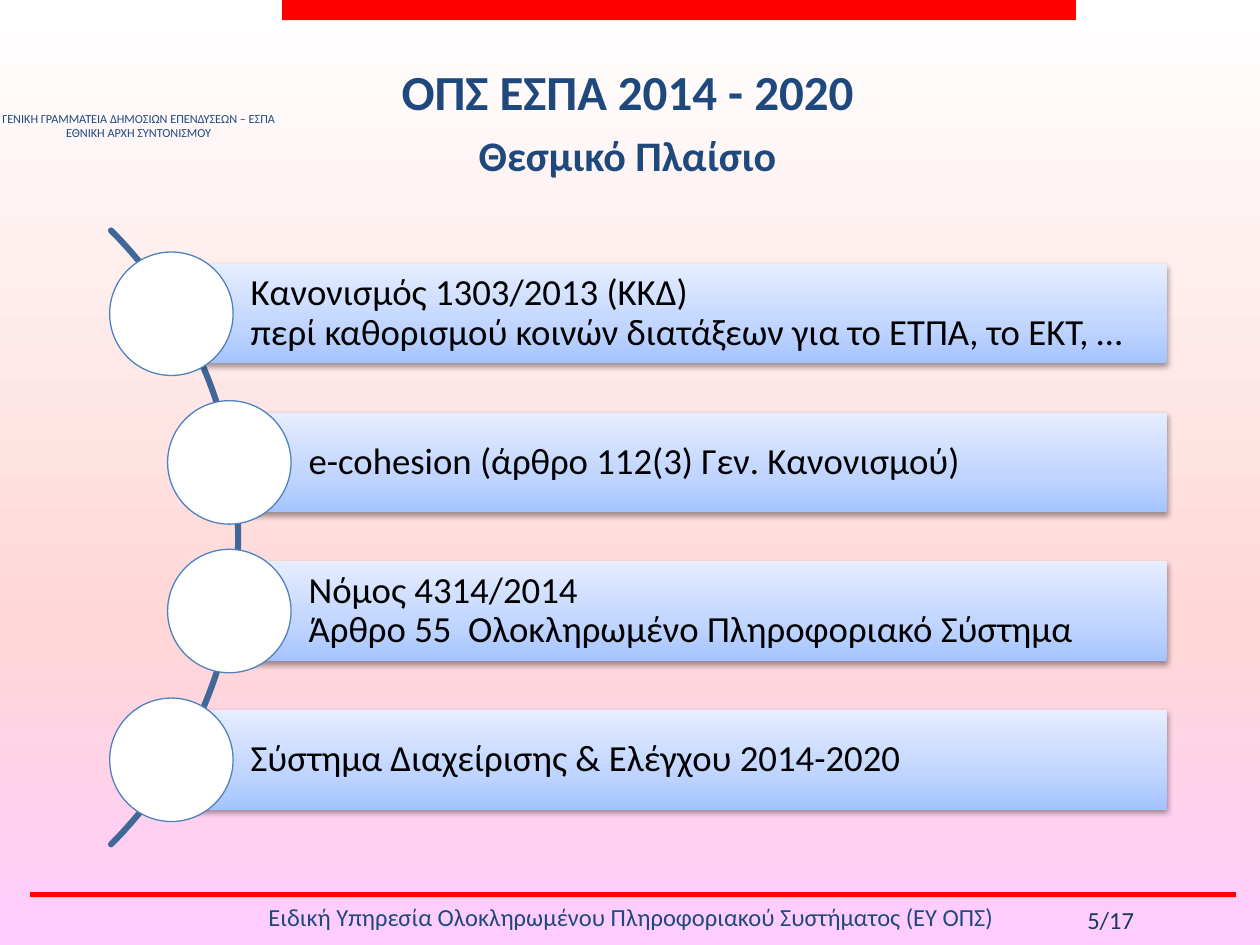
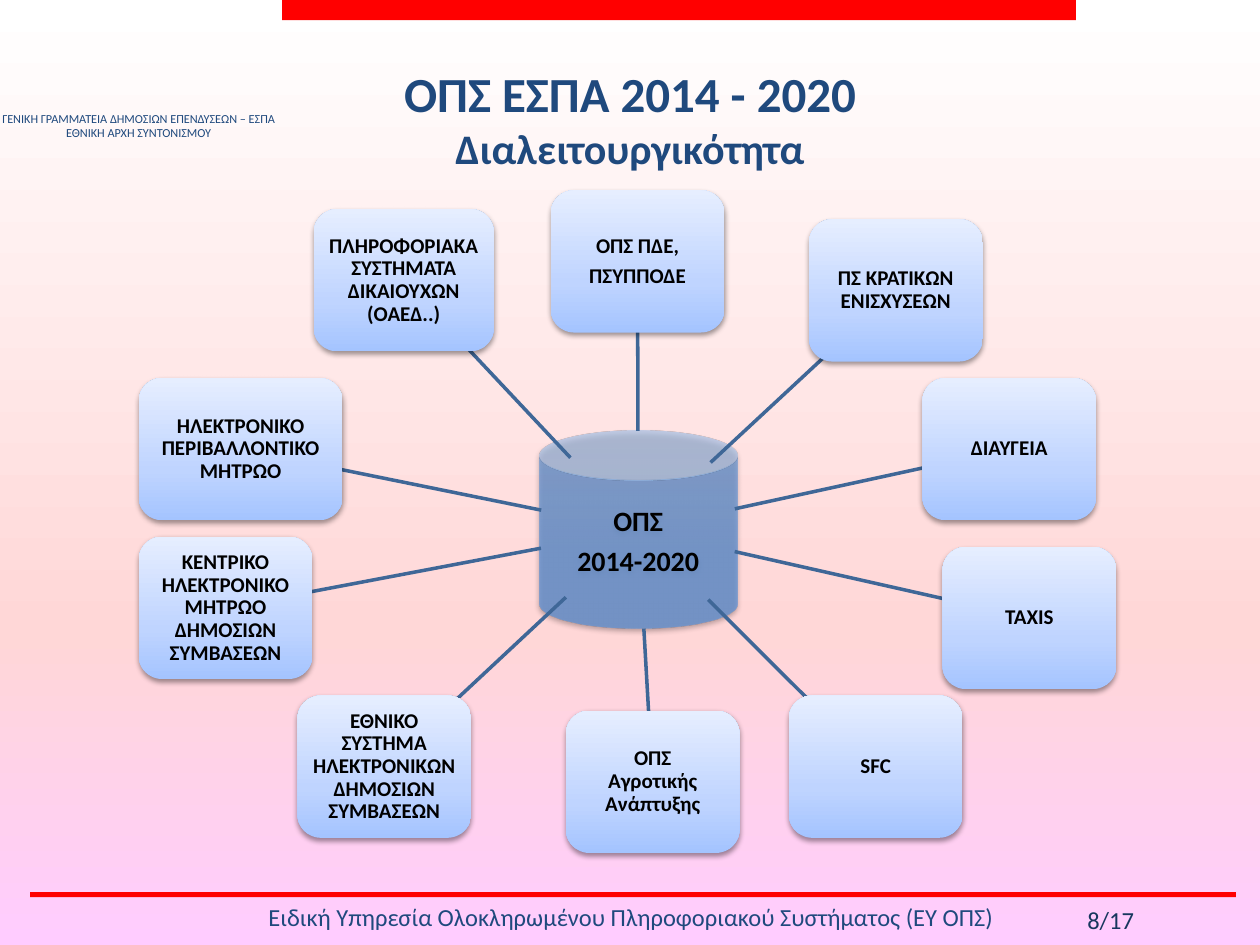
import dataclasses
import math
import typing

import lxml.etree
import pptx
import pptx.dml.color
import pptx.enum.shapes
import pptx.enum.text
import pptx.oxml.ns
import pptx.util

RGBColor = pptx.dml.color.RGBColor
MSO_SHAPE = pptx.enum.shapes.MSO_SHAPE
PP_ALIGN = pptx.enum.text.PP_ALIGN
MSO_ANCHOR = pptx.enum.text.MSO_ANCHOR
qn = pptx.oxml.ns.qn

SLIDE_WIDTH = pptx.util.Inches(10)
SLIDE_HEIGHT = pptx.util.Inches(7.5)
COLUMN = SLIDE_WIDTH / 100
ROW = SLIDE_HEIGHT / 75

FONT = "Calibri"
RED = RGBColor(0xFF, 0x00, 0x00)
NAVY = RGBColor(0x1F, 0x49, 0x7D)
DARK_NAVY = RGBColor(0x17, 0x37, 0x5E)
BLACK = RGBColor(0x00, 0x00, 0x00)
WHITE = RGBColor(0xFF, 0xFF, 0xFF)
LINK_BLUE = RGBColor(0x3F, 0x67, 0x97)
CIRCLE_BLUE = RGBColor(0x4F, 0x81, 0xBD)
HUB_BLUE = RGBColor(0x55, 0x8E, 0xD5)
BLUSH = RGBColor(0xFF, 0xD7, 0xD7)
ORCHID = RGBColor(0xFF, 0xCC, 0xFF)
PANEL_DEEP = RGBColor(0xA4, 0xC4, 0xFF)
PANEL_MIDDLE = RGBColor(0xBF, 0xD4, 0xFF)
PANEL_LIGHT = RGBColor(0xE6, 0xEE, 0xFF)


class Stop(typing.NamedTuple):
    position: int
    color: RGBColor
    opacity: int = 100


class Line(typing.NamedTuple):
    text: str
    size: float


@dataclasses.dataclass(frozen=True)
class Area:
    left: float
    top: float
    width: float
    height: float

    @property
    def center(self) -> tuple[float, float]:
        return self.left + self.width / 2, self.top + self.height / 2

    def emu(self) -> tuple[int, int, int, int]:
        return (round(self.left * COLUMN), round(self.top * ROW),
                round(self.width * COLUMN), round(self.height * ROW))


@dataclasses.dataclass(frozen=True)
class TextStyle:
    color: RGBColor = BLACK
    bold: bool = False
    align: PP_ALIGN = PP_ALIGN.CENTER
    anchor: MSO_ANCHOR = MSO_ANCHOR.MIDDLE
    insets: tuple[float, float, float, float] = (1, 0.5, 1, 0.5)
    spacing: float = 1.0
    after: float = 0


@dataclasses.dataclass(frozen=True)
class Rule:
    text: str
    center_column: float


@dataclasses.dataclass(frozen=True)
class System:
    names: tuple[str, ...]
    left: float
    top: float
    width: float = 13.8
    height: float = 11.3

    @property
    def area(self) -> Area:
        return Area(self.left, self.top, self.width, self.height)


BACKGROUND_STOPS = (Stop(0, WHITE), Stop(67, BLUSH), Stop(100, ORCHID))
PANEL_STOPS = (Stop(0, PANEL_DEEP), Stop(35, PANEL_MIDDLE), Stop(100, PANEL_LIGHT))
HUB_STOPS = (Stop(0, HUB_BLUE, 70), Stop(35, HUB_BLUE, 70), Stop(100, HUB_BLUE, 60))

NO_INSETS = (0, 0, 0, 0)
TITLE_STYLE = TextStyle(NAVY, bold=True)
FOOTER_STYLE = TextStyle(NAVY, anchor=MSO_ANCHOR.TOP)
AUTHORITY_STYLE = TextStyle(NAVY, anchor=MSO_ANCHOR.TOP, insets=NO_INSETS)
NUMBER_STYLE = TextStyle(DARK_NAVY, anchor=MSO_ANCHOR.TOP, insets=NO_INSETS)
RULE_STYLE = TextStyle(align=PP_ALIGN.LEFT, insets=(6.3, 0.6, 0.6, 0.6),
                       spacing=0.9, after=0.35)
SYSTEM_STYLE = TextStyle(bold=True, insets=(0.1, 0.1, 0.1, 0.1), spacing=0.9, after=0.35)

BANDS = (Area(22.4, 0, 63, 1.6), Area(2.4, 70.8, 95.7, 0.4))
FOOTER = "Ειδική Υπηρεσία Ολοκληρωμένου Πληροφοριακού Συστήματος (ΕΥ ΟΠΣ)"
AUTHORITY = ("ΓΕΝΙΚΗ ΓΡΑΜΜΑΤΕΙΑ ΔΗΜΟΣΙΩΝ ΕΠΕΝΔΥΣΕΩΝ – ΕΣΠΑ", "ΕΘΝΙΚΗ ΑΡΧΗ ΣΥΝΤΟΝΙΣΜΟΥ")
TITLE = Line("ΟΠΣ ΕΣΠΑ 2014 - 2020", 28)
SLIDE_COUNT = 17

RULES = (
    Rule("Κανονισμός 1303/2013 (ΚΚΔ)\n"
         "περί καθορισμού κοινών διατάξεων για το ΕΤΠΑ, το ΕΚΤ, …", 13.6),
    Rule("e-cohesion (άρθρο 112(3) Γεν. Κανονισμού)", 18.2),
    Rule("Νόμος 4314/2014\nΆρθρο 55  Ολοκληρωμένο Πληροφοριακό Σύστημα", 18.2),
    Rule("Σύστημα Διαχείρισης & Ελέγχου 2014-2020", 13.6),
)
FIRST_RULE_ROW = 24.9
RULE_PITCH = 11.8
RULE_HEIGHT = 7.9
RULE_RIGHT = 92.6
CIRCLE_SIZE = 9.8
ARC_CENTER = (-15.55, 42.65)
ARC_RADIUS = 34.45

HUB = Area(42.8, 34.2, 15.7, 15.7)
LINK_REACH = 0.9
SYSTEMS = (
    System(("ΟΠΣ ΠΔΕ,", "ΠΣΥΠΠΟΔΕ"), 43.7, 15.1),
    System(("ΠΣ ΚΡΑΤΙΚΩΝ ΕΝΙΣΧΥΣΕΩΝ",), 64.2, 17.4),
    System(("ΔΙΑΥΓΕΙΑ",), 73.2, 30),
    System(("TAXIS",), 74.8, 43.4),
    System(("SFC",), 62.6, 55.2),
    System(("ΟΠΣ\nΑγροτικής Ανάπτυξης",), 44.9, 56.4),
    System(("ΕΘΝΙΚΟ ΣΥΣΤΗΜΑ ΗΛΕΚΤΡΟΝΙΚΩΝ ΔΗΜΟΣΙΩΝ ΣΥΜΒΑΣΕΩΝ",), 23.6, 55.2),
    System(("ΚΕΝΤΡΙΚΟ ΗΛΕΚΤΡΟΝΙΚΟ ΜΗΤΡΩΟ ΔΗΜΟΣΙΩΝ ΣΥΜΒΑΣΕΩΝ",), 11, 42.6),
    System(("ΗΛΕΚΤΡΟΝΙΚΟ ΠΕΡΙΒΑΛΛΟΝΤΙΚΟ ΜΗΤΡΩΟ",), 11, 30, width=16.2),
    System(("ΠΛΗΡΟΦΟΡΙΑΚΑ ΣΥΣΤΗΜΑΤΑ ΔΙΚΑΙΟΥΧΩΝ (ΟΑΕΔ..)",), 24.9, 16.6, width=14.3),
)


def add_color(parent, stop: Stop) -> None:
    color = lxml.etree.SubElement(parent, qn("a:srgbClr"), val=str(stop.color))
    if stop.opacity < 100:
        lxml.etree.SubElement(color, qn("a:alpha"), val=str(stop.opacity * 1000))


def fill_gradient(fill, owner, stops: tuple[Stop, ...], angle: int) -> None:
    fill.gradient()
    gradient = next(owner.iter(qn("a:gradFill")))
    for child in list(gradient):
        gradient.remove(child)
    stop_list = lxml.etree.SubElement(gradient, qn("a:gsLst"))
    for stop in stops:
        add_color(lxml.etree.SubElement(stop_list, qn("a:gs"),
                                        pos=str(stop.position * 1000)), stop)
    lxml.etree.SubElement(gradient, qn("a:lin"), ang=str(angle * 60000), scaled="0")


def write_text(frame, lines: typing.Sequence[Line], style: TextStyle) -> None:
    frame.word_wrap = True
    frame.auto_size = pptx.enum.text.MSO_AUTO_SIZE.NONE
    frame.vertical_anchor = style.anchor
    left, top, right, bottom = style.insets
    frame.margin_left, frame.margin_right = round(left * COLUMN), round(right * COLUMN)
    frame.margin_top, frame.margin_bottom = round(top * ROW), round(bottom * ROW)
    for index, line in enumerate(lines):
        paragraph = frame.add_paragraph() if index else frame.paragraphs[0]
        paragraph.alignment = style.align
        paragraph.line_spacing = style.spacing
        paragraph.space_after = pptx.util.Pt(style.after * line.size)
        for part_index, part in enumerate(line.text.split("\n")):
            if part_index:
                paragraph.add_line_break()
            run = paragraph.add_run()
            run.text = part
            run.font.name = FONT
            run.font.size = pptx.util.Pt(line.size)
            run.font.bold = style.bold
            run.font.color.rgb = style.color


def add_text(slide, area: Area, lines: typing.Sequence[Line], style: TextStyle) -> None:
    write_text(slide.shapes.add_textbox(*area.emu()).text_frame, lines, style)


def add_solid(slide, kind: MSO_SHAPE, area: Area, fill: RGBColor,
              outline: RGBColor | None = None) -> None:
    shape = slide.shapes.add_shape(kind, *area.emu())
    shape.shadow.inherit = False
    shape.fill.solid()
    shape.fill.fore_color.rgb = fill
    if outline is None:
        shape.line.fill.background()
    else:
        shape.line.color.rgb = outline
        shape.line.width = pptx.util.Pt(0.75)


def add_panel(slide, kind: MSO_SHAPE, area: Area, lines: typing.Sequence[Line],
              style: TextStyle, stops: tuple[Stop, ...] = PANEL_STOPS) -> None:
    shape = slide.shapes.add_shape(kind, *area.emu())
    properties = shape._element.spPr
    fill_gradient(shape.fill, properties, stops, 270)
    shape.line.fill.background()
    shape.shadow.inherit = False
    shadow = lxml.etree.SubElement(
        properties.find(qn("a:effectLst")), qn("a:outerShdw"), blurRad="40000",
        dist="20000", dir="5400000", rotWithShape="0")
    add_color(shadow, Stop(0, BLACK, 38))
    write_text(shape.text_frame, lines, style)


def add_base(presentation, number: int, title_area: Area, title_lines: typing.Sequence[Line]):
    slide = presentation.slides.add_slide(presentation.slide_layouts[5])
    for band in BANDS:
        add_solid(slide, MSO_SHAPE.RECTANGLE, band, RED)
    add_text(slide, Area(7.3, 71.1, 85.6, 3.4), [Line(FOOTER, 14)], FOOTER_STYLE)
    add_text(slide, Area(0, 8.8, 22, 2.4), [Line(text, 7) for text in AUTHORITY],
             AUTHORITY_STYLE)
    add_text(slide, Area(84.6, 71.8, 7.1, 2.8), [Line(f"{number}/{SLIDE_COUNT}", 14)],
             NUMBER_STYLE)
    title = slide.shapes.title
    title.left, title.top, title.width, title.height = title_area.emu()
    write_text(title.text_frame, title_lines, TITLE_STYLE)
    return slide


def add_arc(slide) -> None:
    points = []
    for degrees in range(-45, 46):
        angle = math.radians(degrees)
        points.append((round((ARC_CENTER[0] + ARC_RADIUS * math.cos(angle)) * COLUMN),
                       round((ARC_CENTER[1] + ARC_RADIUS * math.sin(angle)) * ROW)))
    builder = slide.shapes.build_freeform(*points[0])
    builder.add_line_segments(points[1:], close=False)
    arc = builder.convert_to_shape()
    arc.shadow.inherit = False
    arc.fill.background()
    arc.line.color.rgb = LINK_BLUE
    arc.line.width = pptx.util.Pt(3.5)
    arc.line._get_or_add_ln().set("cap", "rnd")


def add_link(slide, system: Area) -> None:
    start_column, start_row = HUB.center
    end_column, end_row = system.center
    across, down = end_column - start_column, end_row - start_row
    leave = HUB.width / 2 / math.hypot(across, down)
    arrive = 1 - LINK_REACH * min(system.width / 2 / max(abs(across), 0.01),
                                  system.height / 2 / max(abs(down), 0.01))
    ends = [round(value) for share in (leave, arrive)
            for value in ((start_column + share * across) * COLUMN,
                          (start_row + share * down) * ROW)]
    link = slide.shapes.add_connector(pptx.enum.shapes.MSO_CONNECTOR.STRAIGHT, *ends)
    link.line.color.rgb = LINK_BLUE
    link.line.width = pptx.util.Pt(2)
    lxml.etree.SubElement(link._element.spPr, qn("a:effectLst"))


def add_framework_slide(presentation) -> None:
    slide = add_base(presentation, 5, Area(11, 2.5, 77.6, 9.4), [TITLE])
    add_text(slide, Area(9.1, 7.6, 81.4, 9.4), [Line("Θεσμικό Πλαίσιο", 24)], TITLE_STYLE)
    add_arc(slide)
    for index, rule in enumerate(RULES):
        row = FIRST_RULE_ROW + index * RULE_PITCH
        bar = Area(rule.center_column, row - RULE_HEIGHT / 2,
                   RULE_RIGHT - rule.center_column, RULE_HEIGHT)
        circle = Area(rule.center_column - CIRCLE_SIZE / 2, row - CIRCLE_SIZE / 2,
                      CIRCLE_SIZE, CIRCLE_SIZE)
        add_panel(slide, MSO_SHAPE.RECTANGLE, bar, [Line(rule.text, 21)], RULE_STYLE)
        add_solid(slide, MSO_SHAPE.OVAL, circle, WHITE, CIRCLE_BLUE)


def add_interoperability_slide(presentation) -> None:
    slide = add_base(presentation, 8, Area(0, 5.2, 100, 8.3),
                     [TITLE, Line("Διαλειτουργικότητα", 24)])
    add_panel(slide, MSO_SHAPE.CAN, HUB, [Line("ΟΠΣ", 16), Line("2014-2020", 16)],
              SYSTEM_STYLE, HUB_STOPS)
    for system in SYSTEMS:
        add_link(slide, system.area)
        add_panel(slide, MSO_SHAPE.ROUNDED_RECTANGLE, system.area,
                  [Line(name, 12) for name in system.names], SYSTEM_STYLE)


def main() -> None:
    presentation = pptx.Presentation()
    presentation.slide_width = SLIDE_WIDTH
    presentation.slide_height = SLIDE_HEIGHT
    master = presentation.slide_master
    fill_gradient(master.background.fill, master._element.cSld, BACKGROUND_STOPS, 90)
    add_framework_slide(presentation)
    add_interoperability_slide(presentation)
    presentation.save("out.pptx")


if __name__ == "__main__":
    main()
